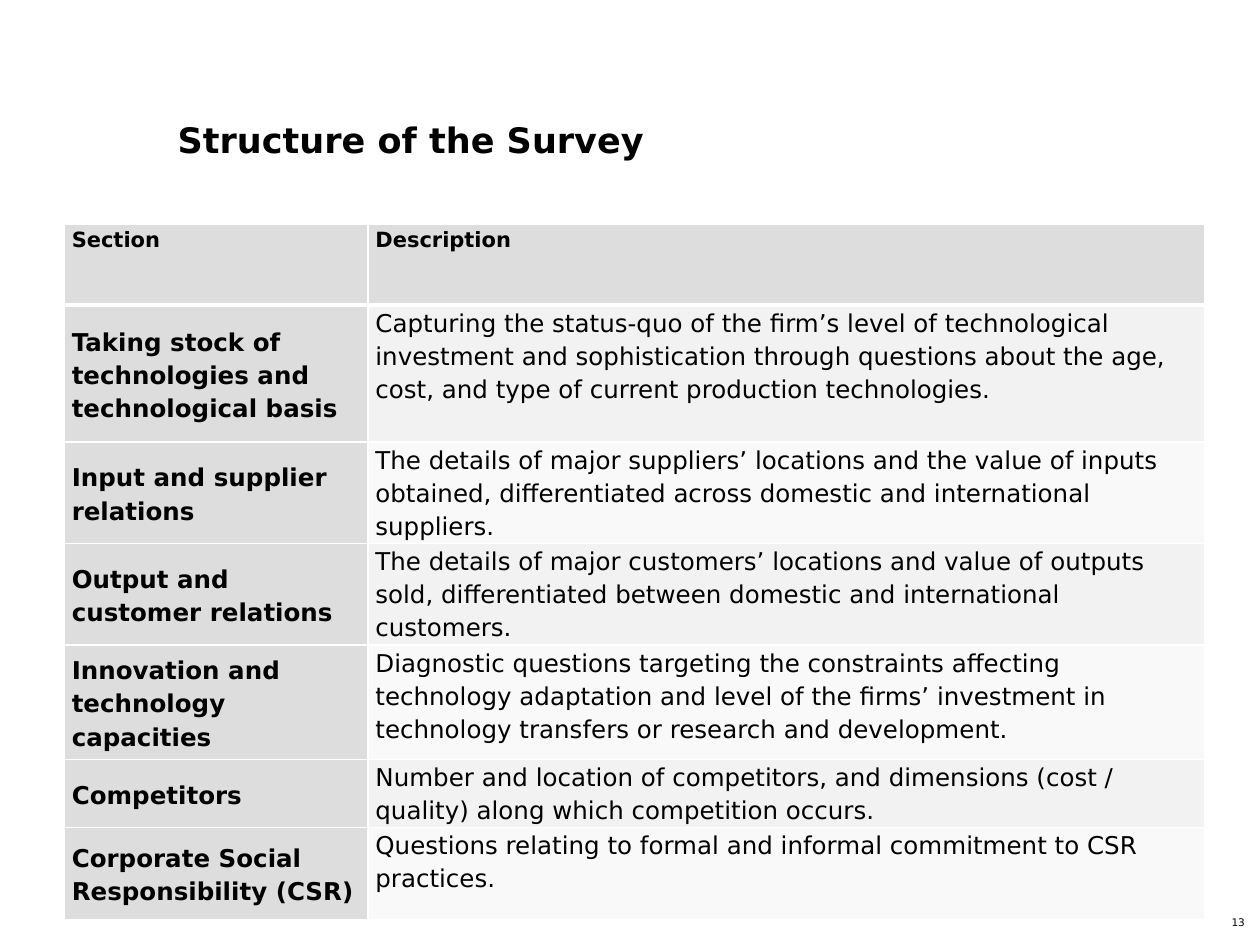
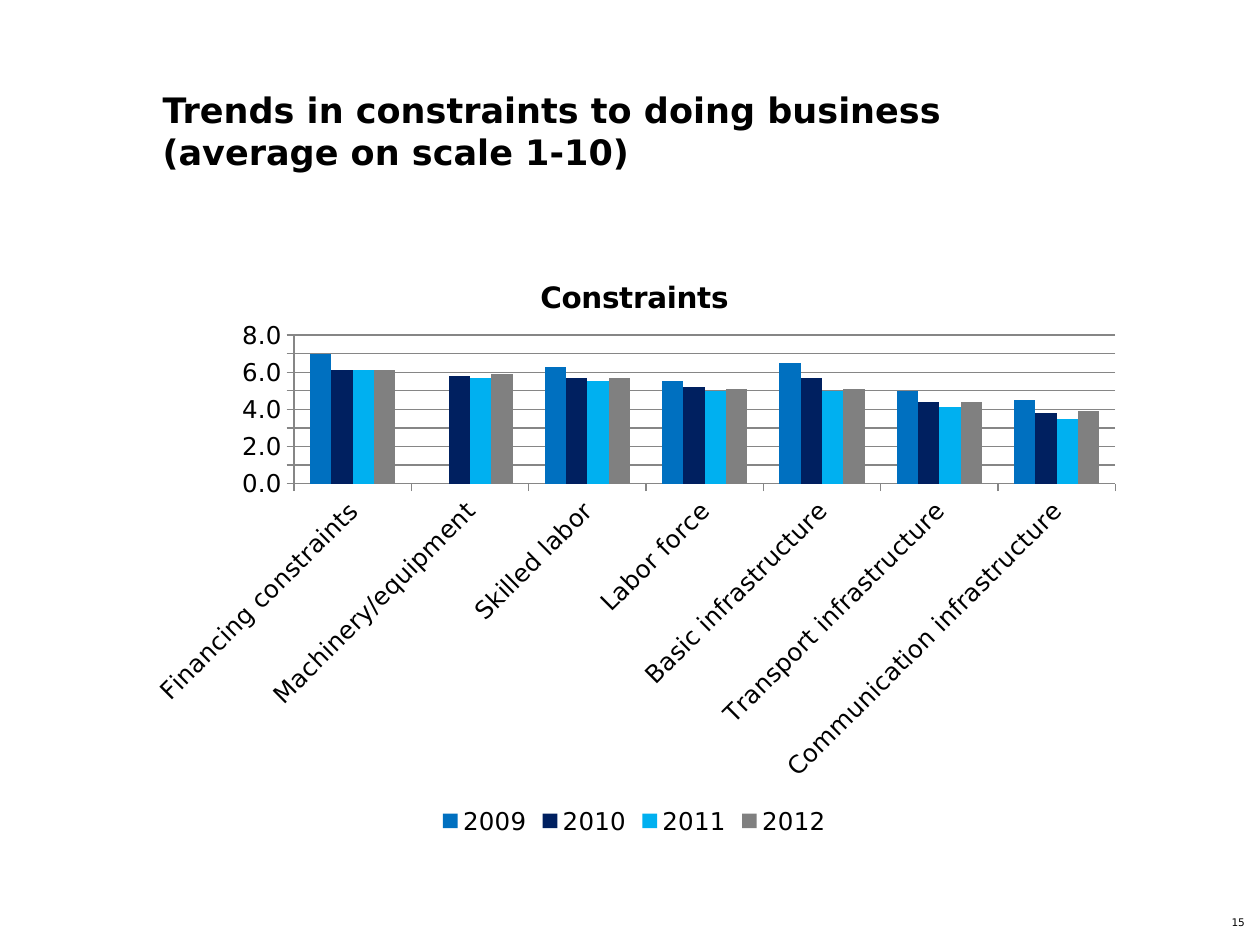
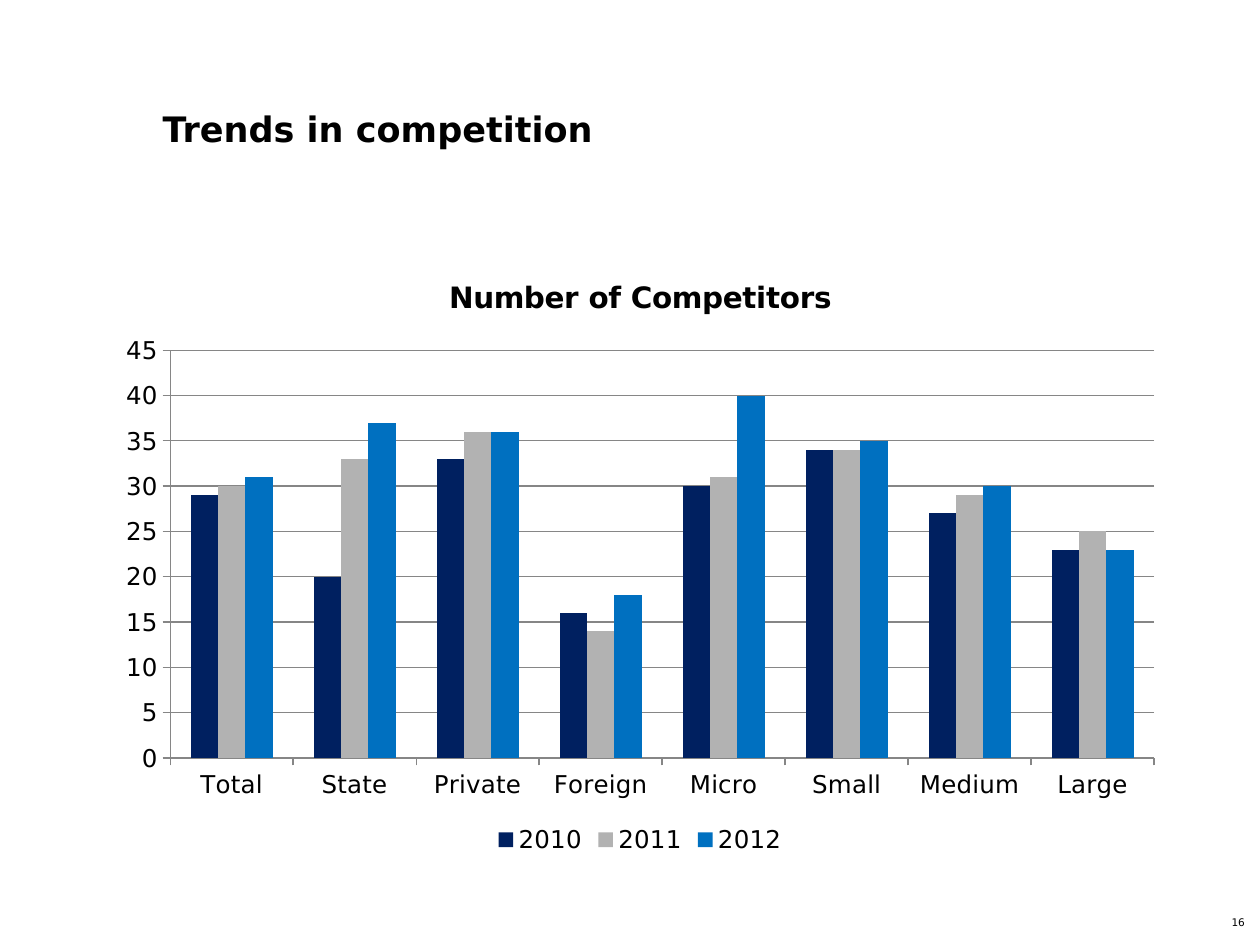
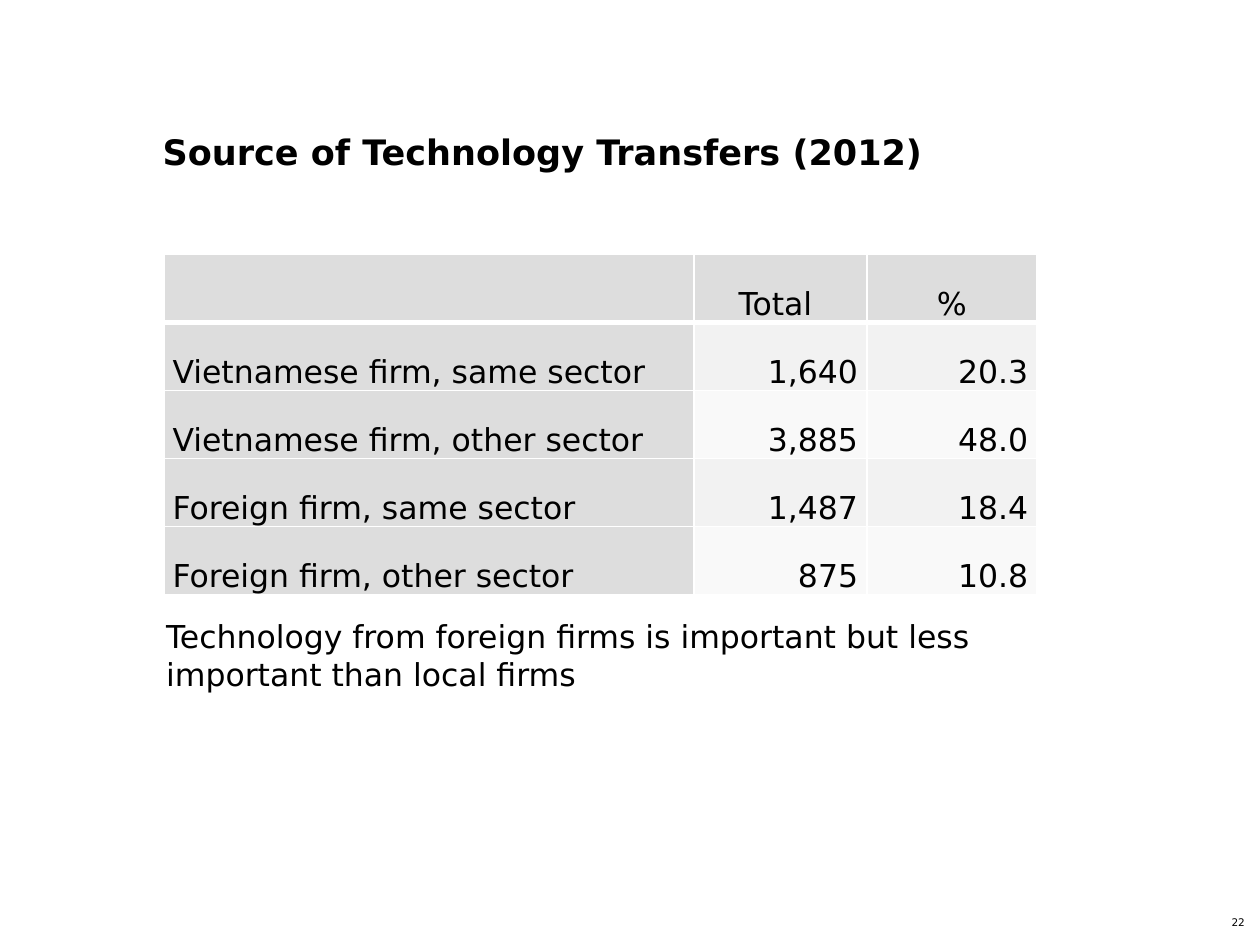
"""Build four slides of survey findings: two tables and two column charts."""
from dataclasses import dataclass

from lxml import etree
from pptx import Presentation
from pptx.chart.data import CategoryChartData
from pptx.dml.color import RGBColor
from pptx.enum.chart import XL_CHART_TYPE, XL_LEGEND_POSITION
from pptx.enum.text import MSO_ANCHOR, PP_ALIGN
from pptx.oxml.ns import qn
from pptx.util import Inches, Pt

TOP, MID, LOW = MSO_ANCHOR.TOP, MSO_ANCHOR.MIDDLE, MSO_ANCHOR.BOTTOM
LEFT, MIDST, RIGHT = PP_ALIGN.LEFT, PP_ALIGN.CENTER, PP_ALIGN.RIGHT
COLUMN = XL_CHART_TYPE.COLUMN_CLUSTERED
BELOW = XL_LEGEND_POSITION.BOTTOM


@dataclass(frozen=True)
class Theme:
    font: str = "DejaVu Sans"
    ink: str = "000000"
    white: str = "FFFFFF"
    head: str = "DDDDDD"
    bands: tuple = ("F2F2F2", "F9F9F9")
    axis: str = "868686"
    blue: str = "0070C0"
    navy: str = "002060"
    sky: str = "00B0F0"
    gray: str = "808080"
    silver: str = "B2B2B2"
    title: float = 20
    body: float = 18
    label: float = 14
    small: float = 12
    page: float = 6
    chart: float = 16.8
    lead: float = 1.15


T = Theme()
WIDE, HIGH = 10, 7.5
PAGE = (9.42, 7.27, 0.46, 0.17)
TITLE = (1.29, 0.67, 6.29, 0.7)

SURVEY = [
    ("Section", "Description"),
    ("Taking stock of technologies and technological basis",
     "Capturing the status-quo of the firm’s level of technological investment and "
     "sophistication through questions about the age, cost, and type of current "
     "production technologies."),
    ("Input and supplier relations",
     "The details of major suppliers’ locations and the value of inputs obtained, "
     "differentiated across domestic and international suppliers."),
    ("Output and customer relations",
     "The details of major customers’ locations and value of outputs sold, "
     "differentiated between domestic and international customers."),
    ("Innovation and technology capacities",
     "Diagnostic questions targeting the constraints affecting technology adaptation "
     "and level of the firms’ investment in technology transfers or research and "
     "development."),
    ("Competitors",
     "Number and location of competitors, and dimensions (cost / quality) along which "
     "competition occurs."),
    ("Corporate Social Responsibility (CSR)",
     "Questions relating to formal and informal commitment to CSR practices."),
]

SOURCES = [
    ("", "Total ", "%"),
    ("Vietnamese firm, same sector", "1,640", "20.3"),
    ("Vietnamese firm, other sector", "3,885", "48.0"),
    ("Foreign firm, same sector", "1,487", "18.4"),
    ("Foreign firm, other sector", "875", "10.8"),
]
REMARK = "Technology from foreign firms is important but less important than local firms"

LIMITS = {
    "title": "Constraints",
    "cats": ["Financing constraints", "Machinery/equipment", "Skilled labor",
             "Labor force", "Basic infrastructure", "Transport infrastructure",
             "Communication infrastructure"],
    "series": [
        ("2009", T.blue, (7, None, 6.3, 5.5, 6.5, 5, 4.5)),
        ("2010", T.navy, (6.1, 5.8, 5.7, 5.2, 5.7, 4.4, 3.8)),
        ("2011", T.sky, (6.1, 5.7, 5.5, 5, 5, 4.1, 3.5)),
        ("2012", T.gray, (6.1, 5.9, 5.7, 5.1, 5.1, 4.4, 3.9)),
    ],
    "top": 8, "step": 1, "form": "0.0", "turn": -45,
}

RIVALS = {
    "title": "Number of Competitors",
    "cats": ["Total", "State", "Private", "Foreign", "Micro", "Small", "Medium", "Large"],
    "series": [
        ("2010", T.navy, (29, 20, 33, 16, 30, 34, 27, 23)),
        ("2011", T.silver, (30, 33, 36, 14, 31, 34, 29, 25)),
        ("2012", T.blue, (31, 37, 36, 18, 40, 35, 30, 23)),
    ],
    "top": 45, "step": 5, "form": "0", "turn": 0,
}


def color(code):
    return RGBColor.from_string(code)


def style(font, size, bold=False):
    font.name, font.size, font.bold = T.font, Pt(size), bold
    font.color.rgb = color(T.ink)


def write(slide, text, box, size, bold=False, align=LEFT, anchor=TOP, pad=(0, 0)):
    frame = slide.shapes.add_textbox(*map(Inches, box)).text_frame
    frame.word_wrap = True
    frame.vertical_anchor = anchor
    frame.margin_left = frame.margin_right = Inches(pad[0])
    frame.margin_top = frame.margin_bottom = Inches(pad[1])
    frame.text = text
    line = frame.paragraphs[0]
    line.alignment = align
    style(line.runs[0].font, size, bold)


def start(deck, title, page, box=TITLE, anchor=LOW):
    slide = deck.slides.add_slide(deck.slide_layouts[6])
    write(slide, title, box, T.title, True, anchor=anchor)
    write(slide, str(page), PAGE, T.page, align=RIGHT)
    return slide


def edge(cell, base):
    props = cell._tc.get_or_add_tcPr()
    sides = (("lnL", 1), ("lnR", 1), ("lnT", 1), ("lnB", base))
    for spot, (tag, width) in enumerate(sides):
        line = etree.Element(qn(f"a:{tag}"), w=str(Pt(width)))
        fill = etree.SubElement(line, qn("a:solidFill"))
        etree.SubElement(fill, qn("a:srgbClr"), val=T.white)
        props.insert(spot, line)


def grid(slide, data, spot, cols, rows, pad, look):
    box = (*spot, sum(cols), sum(rows))
    table = slide.shapes.add_table(len(rows), len(cols), *map(Inches, box)).table
    table.first_row = table.horz_banding = False
    for part, width in zip(table.columns, cols):
        part.width = Inches(width)
    for part, height in zip(table.rows, rows):
        part.height = Inches(height)
    for r, texts in enumerate(data):
        for c, text in enumerate(texts):
            cell = table.cell(r, c)
            size, bold, align, anchor = look(r, c)
            cell.margin_left = cell.margin_right = Inches(pad)
            cell.margin_top = cell.margin_bottom = 0
            cell.vertical_anchor = anchor
            cell.fill.solid()
            shade = T.head if r == 0 or c == 0 else T.bands[(r - 1) % 2]
            cell.fill.fore_color.rgb = color(shade)
            edge(cell, 3 if r == 0 else 1)
            cell.text = text
            line = cell.text_frame.paragraphs[0]
            line.alignment, line.line_spacing = align, T.lead
            for run in line.runs:
                style(run.font, size, bold)


def survey_look(r, c):
    if r == 0:
        return T.small, True, LEFT, TOP
    return T.label, c == 0, LEFT, TOP if c else MID


def source_look(r, c):
    align = LEFT if c == 0 else RIGHT if r else MIDST
    return T.body, False, align, LOW


def trace(line):
    line.color.rgb = color(T.axis)
    line.width = Pt(0.75)


def plot(slide, info, box):
    data = CategoryChartData(number_format=info["form"])
    data.categories = info["cats"]
    for name, _, values in info["series"]:
        data.add_series(name, values)
    chart = slide.shapes.add_chart(COLUMN, *map(Inches, box), data).chart
    style(chart.font, T.label)

    chart.has_title = True
    head = chart.chart_title
    head.include_in_layout = False
    head.text_frame.text = info["title"]
    style(head.text_frame.paragraphs[0].runs[0].font, T.chart, True)
    chart.has_legend = True
    chart.legend.position = BELOW
    chart.legend.include_in_layout = False
    style(chart.legend.font, T.label)

    bars = chart.plots[0]
    bars.gap_width, bars.overlap, bars.vary_by_categories = 150, 0, False
    for item, (_, shade, _) in zip(bars.series, info["series"]):
        item.format.fill.solid()
        item.format.fill.fore_color.rgb = color(shade)
        item.invert_if_negative = False

    for axis in (chart.category_axis, chart.value_axis):
        style(axis.tick_labels.font, T.label)
        trace(axis.format.line)
    scale = chart.value_axis
    scale.minimum_scale, scale.maximum_scale = 0, info["top"]
    scale.major_unit = info["step"]
    scale.tick_labels.number_format = info["form"]
    scale.tick_labels.number_format_is_linked = False
    scale.has_major_gridlines = True
    trace(scale.major_gridlines.format.line)
    if info["turn"]:
        body = chart.element.xpath(".//c:catAx/c:txPr/a:bodyPr")[0]
        body.set("rot", str(info["turn"] * 60000))
        body.set("vert", "horz")


def main():
    deck = Presentation()
    deck.slide_width, deck.slide_height = Inches(WIDE), Inches(HIGH)

    slide = start(deck, "Structure of the Survey", 13, (1.41, 0.94, 6.29, 0.65), TOP)
    heights = (0.64, 1.09, 0.73, 0.73, 0.91, 0.54, 0.73)
    grid(slide, SURVEY, (0.51, 1.78), (2.41, 6.64), heights, 0.06, survey_look)

    slide = start(deck, "Trends in constraints to doing business (average on scale 1-10)", 15)
    plot(slide, LIMITS, (1.06, 2.02, 7.95, 4.65))

    slide = start(deck, "Trends in competition", 16, (1.29, 0.67, 6.7, 0.7), MID)
    plot(slide, RIVALS, (0.83, 2.02, 8.5, 4.8))

    slide = start(deck, "Source of Technology Transfers (2012)", 22)
    heights = [0.54] * len(SOURCES)
    grid(slide, SOURCES, (1.3, 2.02), (4.21, 1.37, 1.35), heights, 0.07, source_look)
    write(slide, REMARK, (1.22, 4.85, 7.32, 0.71), T.body, pad=(0.1, 0.05))

    deck.save("out.pptx")


if __name__ == "__main__":
    main()
